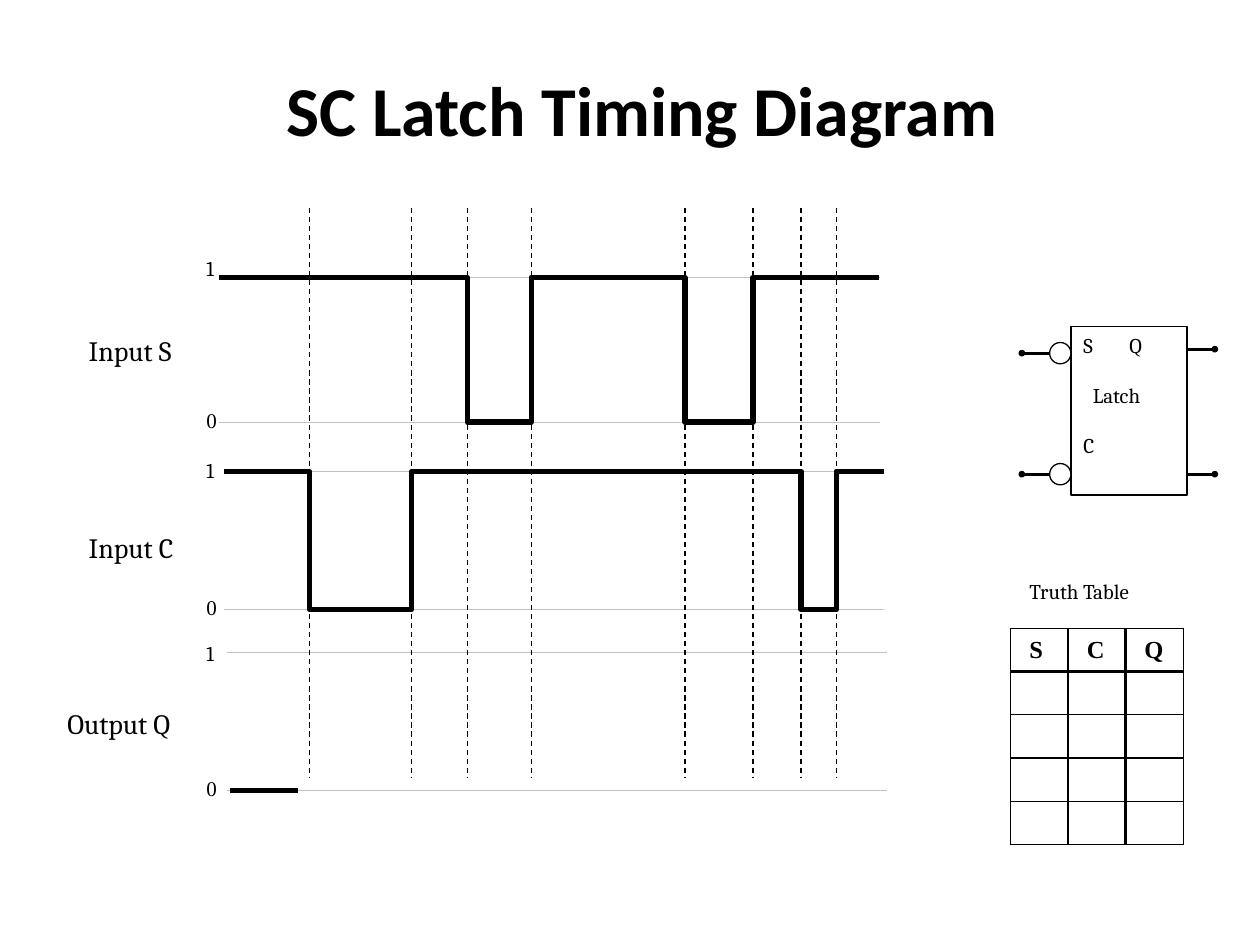
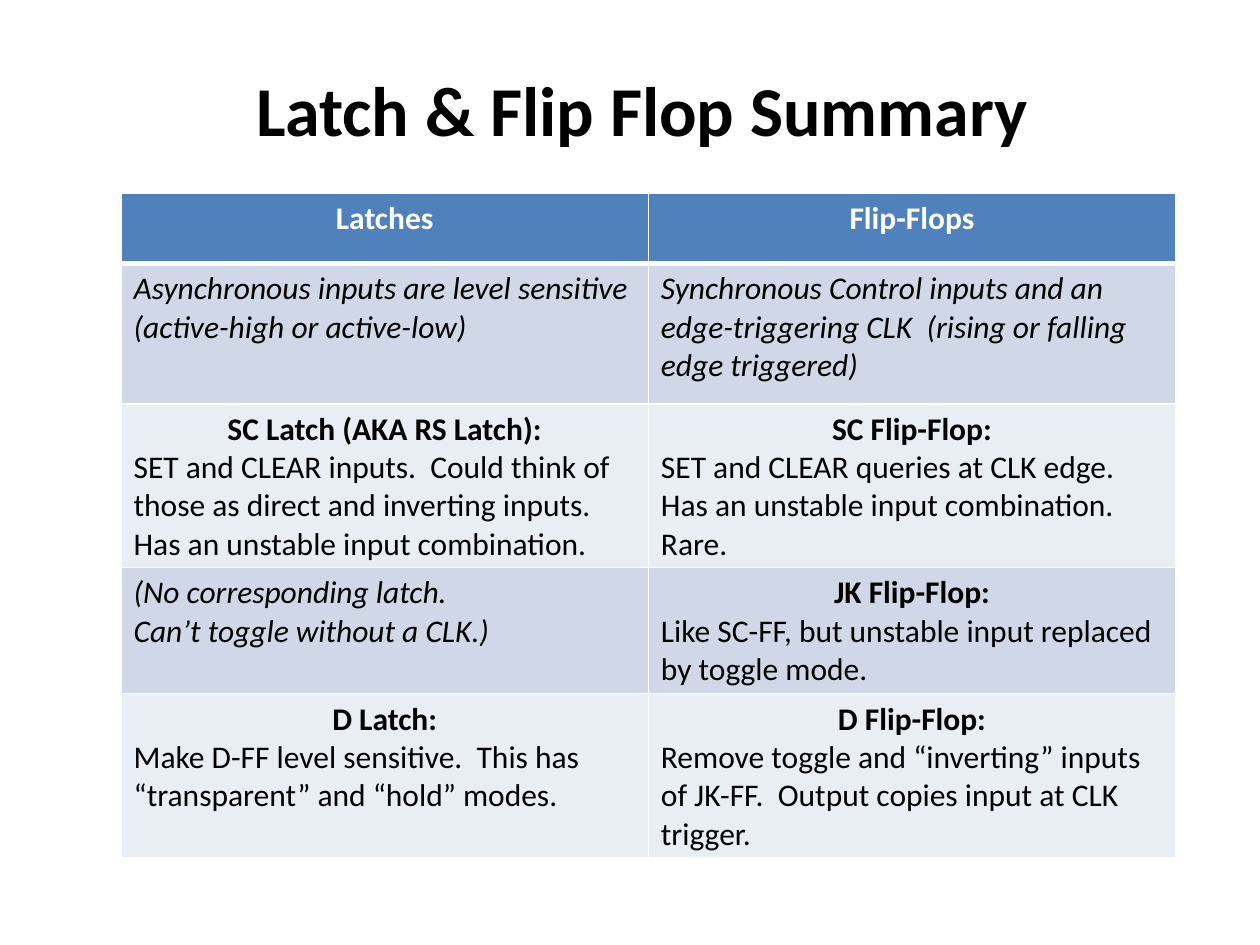
from lxml import etree
from pptx import Presentation
from pptx.dml.color import RGBColor
from pptx.enum import dml, shapes, text
from pptx.oxml.ns import qn
from pptx.util import Cm, Pt

HEX = {"ink": "000000", "paper": "FFFFFF", "guide": "C0C0C0",
       "head": "4F81BD", "dark": "D0D8E8", "light": "E9EDF4"}
SANS, SERIF, ROMAN = "Calibri", "Cambria", "Times New Roman"
MID = text.PP_ALIGN.CENTER
KIND = shapes.MSO_SHAPE

# Text formats
TITLE = {"name": SANS, "size": Pt(40), "bold": True}
NAME = {"name": SERIF, "size": Pt(16)}
NOTE = {"name": SERIF, "size": Pt(12)}
ZERO = {"name": ROMAN, "size": Pt(12)}
TRUTH = {"name": ROMAN, "size": Pt(14), "bold": True}
BODY = {"name": SANS, "size": Pt(18), "bold": False, "italic": False}
STRONG = {**BODY, "bold": True}
SLANT = {**BODY, "italic": True}


def tone(key):
    return RGBColor.from_string(HEX[key])


def apply(thing, vals):
    for key, val in vals.items():
        setattr(thing, key, val)


def write(para, words, fmt, color="ink", align=None):
    run = para.add_run()
    run.text = words
    apply(run.font, fmt)
    run.font.color.rgb = tone(color)
    para.alignment = align


def label(slide, box, words, fmt, align=None):
    frame = slide.shapes.add_textbox(*map(Cm, box)).text_frame
    frame.word_wrap = True
    write(frame.paragraphs[0], words, fmt, align=align)


def stroke(shape, width, color="ink"):
    shape.line.width = Pt(width)
    shape.line.color.rgb = tone(color)


def rule(slide, x1, y1, x2, y2, width=0.75, color="ink", dash=False):
    line = slide.shapes.add_connector(
        shapes.MSO_CONNECTOR.STRAIGHT, Cm(x1), Cm(y1), Cm(x2), Cm(y2))
    stroke(line, width, color)
    if dash:
        line.line.dash_style = dml.MSO_LINE.DASH
    etree.SubElement(line._element.spPr, qn("a:effectLst"))


def block(slide, kind, box, width=0.75, fill=None):
    shape = slide.shapes.add_shape(kind, *map(Cm, box))
    shape.shadow.inherit = False
    stroke(shape, width)
    if fill:
        shape.fill.solid()
        shape.fill.fore_color.rgb = tone(fill)
    else:
        shape.fill.background()
    return shape


def grid(slide, box, cols, heights):
    x, y, w = box
    table = slide.shapes.add_table(
        len(heights), cols, Cm(x), Cm(y), Cm(w), Cm(sum(heights))).table
    for col in table.columns:
        col.width = Cm(w / cols)
    for row, high in zip(table.rows, heights):
        row.height = Cm(high)
    table.horz_banding = False
    return table


def dress(cell, fill, color, **widths):
    props = cell._tc.get_or_add_tcPr()
    for side in "LRTB":
        edge = etree.SubElement(props, qn("a:ln" + side),
                                w=str(Pt(widths[side])))
        paint = etree.SubElement(edge, qn("a:solidFill"))
        etree.SubElement(paint, qn("a:srgbClr"), val=HEX[color])
    cell.fill.solid()
    cell.fill.fore_color.rgb = tone(fill)


def start(deck, title):
    slide = deck.slides.add_slide(deck.slide_layouts[6])
    label(slide, (3.53, 1.22, 18.82, 1.96), title, TITLE, MID)
    return slide


# Timing diagram: lengths are offsets from the corner of its box
EDGES = (1.82, 3.88, 5, 6.29, 9.39, 10.76, 11.73, 12.44)
SPAN = 13.31
SIGNALS = (  # name, name x, name y, line x, high, low, lift of the 1, edges
    ("Input S", -2.88, 2.41, 0, 1.4, 4.32, 0.56, (2, 3, 4, 5)),
    ("Input C", -2.88, 6.38, 0.1, 5.31, 8.1, 0.41, (0, 1, 6, 7)),
    ("Output Q", -3.31, 9.93, 0.15, 8.97, 11.74, 0.38, ()),
)


def wave(slide, x, y, left, high, low, turns):
    level, points = high, [(left, high)]
    for turn in turns:
        points.append((EDGES[turn], level))
        level = low if level == high else high
        points.append((EDGES[turn], level))
    points.append((left + SPAN, level))
    spots = [(Cm(x + dx), Cm(y + dy)) for dx, dy in points]
    path = slide.shapes.build_freeform(*spots[0])
    path.add_line_segments(spots[1:], close=False)
    shape = path.convert_to_shape()
    shape.shadow.inherit = False
    shape.fill.background()
    stroke(shape, 3)


def timing(slide, x, y, deep):
    # Level lines and their labels
    for name, nx, ny, left, high, low, lift, _ in SIGNALS:
        label(slide, (x + nx, y + ny, 2.8, 0.9), name, NAME)
        for mark, level, up, fmt in (("1", high, lift, NOTE),
                                     ("0", low, 0.42, ZERO)):
            rule(slide, x + left, y + level, x + left + SPAN, y + level,
                 color="guide")
            label(slide, (x - 0.51, y + level - up, 0.71, 0.86), mark, fmt)
    # Edge markers
    for edge in EDGES:
        rule(slide, x + edge, y, x + edge, y + deep, dash=True)
    # Waveforms, and the given start of Q
    for *_, left, high, low, _, turns in SIGNALS:
        if turns:
            wave(slide, x, y, left, high, low, turns)
    low = y + SIGNALS[-1][5]
    rule(slide, x + 0.22, low, x + 1.59, low, 3)


def latch(slide, x, y, w, h):
    body = block(slide, KIND.RECTANGLE, (x, y, w, h))
    frame = body.text_frame
    frame.vertical_anchor = text.MSO_ANCHOR.TOP
    frame.word_wrap = True
    for row, words in enumerate(("S\tQ", "Latch", "C")):
        para = frame.add_paragraph() if row else frame.paragraphs[0]
        props = para._p.get_or_add_pPr()
        if row:
            para.space_before = Pt(14.2)
        if "\t" in words:
            tabs = etree.SubElement(props, qn("a:tabLst"))
            etree.SubElement(tabs, qn("a:tab"), pos=str(Cm(0.93)), algn="l")
        if words == "Latch":
            props.set("marL", str(Cm(0.19)))
        write(para, words, NOTE, align=text.PP_ALIGN.LEFT)
    # Inverting inputs on the left, outputs on the right
    ring, dot, wire = 0.43, 0.08, 0.6
    for left, right in ((0.54, 0.46), (2.98, 2.98)):
        block(slide, KIND.OVAL, (x - ring, y + left - ring / 2, ring, ring),
              fill="paper")
        for near, far, level in ((x - ring, x - ring - wire, y + left),
                                 (x + w, x + w + wire, y + right)):
            rule(slide, near, level, far, level, 1.5)
            block(slide, KIND.OVAL,
                  (min(far, far - dot, key=lambda v: abs(v + dot / 2 - near))
                   if far > near else far, level - dot / 2, dot, dot),
                  1.5, "ink")


def truth(slide, x, y, w):
    label(slide, (x + 0.13, y - 1.14, 3.12, 0.91), "Truth Table", NOTE)
    heads = "SCQ"
    table = grid(slide, (x, y, w), len(heads), [0.87] * 5)
    table.first_row = False
    for row in range(5):
        for col, head in enumerate(heads):
            cell = table.cell(row, col)
            apply(cell, {"margin_left": Cm(0.38), "margin_right": 0,
                         "margin_top": 0, "margin_bottom": 0,
                         "vertical_anchor": text.MSO_ANCHOR.MIDDLE})
            dress(cell, "paper", "ink",
                  L=2.25 if col == 2 else 0.75, R=2.25 if col == 1 else 0.75,
                  T=2.25 if row == 1 else 0.75, B=2.25 if row == 0 else 0.75)
            if row == 0:
                write(cell.text_frame.paragraphs[0], head, TRUTH)


# Summary table: each cell is a list of (format, words)
ROWS = (
    ([(STRONG, "Latches")], [(STRONG, "Flip-Flops")]),
    ([(SLANT, "Asynchronous inputs are level sensitive"),
      (SLANT, "(active-high or active-low)")],
     [(SLANT, "Synchronous Control inputs and an edge-triggering CLK  "
              "(rising or falling edge triggered)")]),
    ([(STRONG, "SC Latch (AKA RS Latch):"),
      (BODY, "SET and CLEAR inputs.  Could think of those as direct and "
             "inverting inputs.  Has an unstable input combination.")],
     [(STRONG, "SC Flip-Flop:"),
      (BODY, "SET and CLEAR queries at CLK edge.  Has an unstable input "
             "combination. Rare.")]),
    ([(SLANT, "(No corresponding latch."),
      (SLANT, "Can’t toggle without a CLK.)")],
     [(STRONG, "JK Flip-Flop:"),
      (BODY, "Like SC-FF, but unstable input replaced by toggle mode.")]),
    ([(STRONG, "D Latch:"),
      (BODY, "Make D-FF level sensitive.  This has “transparent” and "
             "“hold” modes.")],
     [(STRONG, "D Flip-Flop:"),
      (BODY, "Remove toggle and “inverting” inputs of JK-FF.  Output copies "
             "input at CLK trigger.")]),
)


def summary(slide, x, y, w):
    table = grid(slide, (x, y, w), 2, (1.42, 2.83, 3.3, 2.54, 3.3))
    for row, cells in enumerate(ROWS):
        fill = ("light", "dark")[row % 2] if row else "head"
        for col, lines in enumerate(cells):
            cell = table.cell(row, col)
            dress(cell, fill, "paper", L=1, R=1,
                  T=3 if row == 1 else 1, B=3 if row == 0 else 1)
            frame = cell.text_frame
            for num, (fmt, words) in enumerate(lines):
                para = frame.add_paragraph() if num else frame.paragraphs[0]
                write(para, words, fmt, "ink" if row else "paper",
                      MID if fmt is STRONG else None)


def main():
    deck = Presentation()
    deck.slide_width, deck.slide_height = Cm(25.4), Cm(19.05)

    slide = start(deck, "SC Latch Timing Diagram")
    timing(slide, 4.42, 4.19, 11.5)
    latch(slide, 21.59, 6.58, 2.34, 3.4)
    truth(slide, 20.37, 12.67, 3.48)

    slide = start(deck, "Latch & Flip Flop Summary")
    summary(slide, 2.44, 3.89, 21.26)

    deck.save("out.pptx")


if __name__ == "__main__":
    main()
